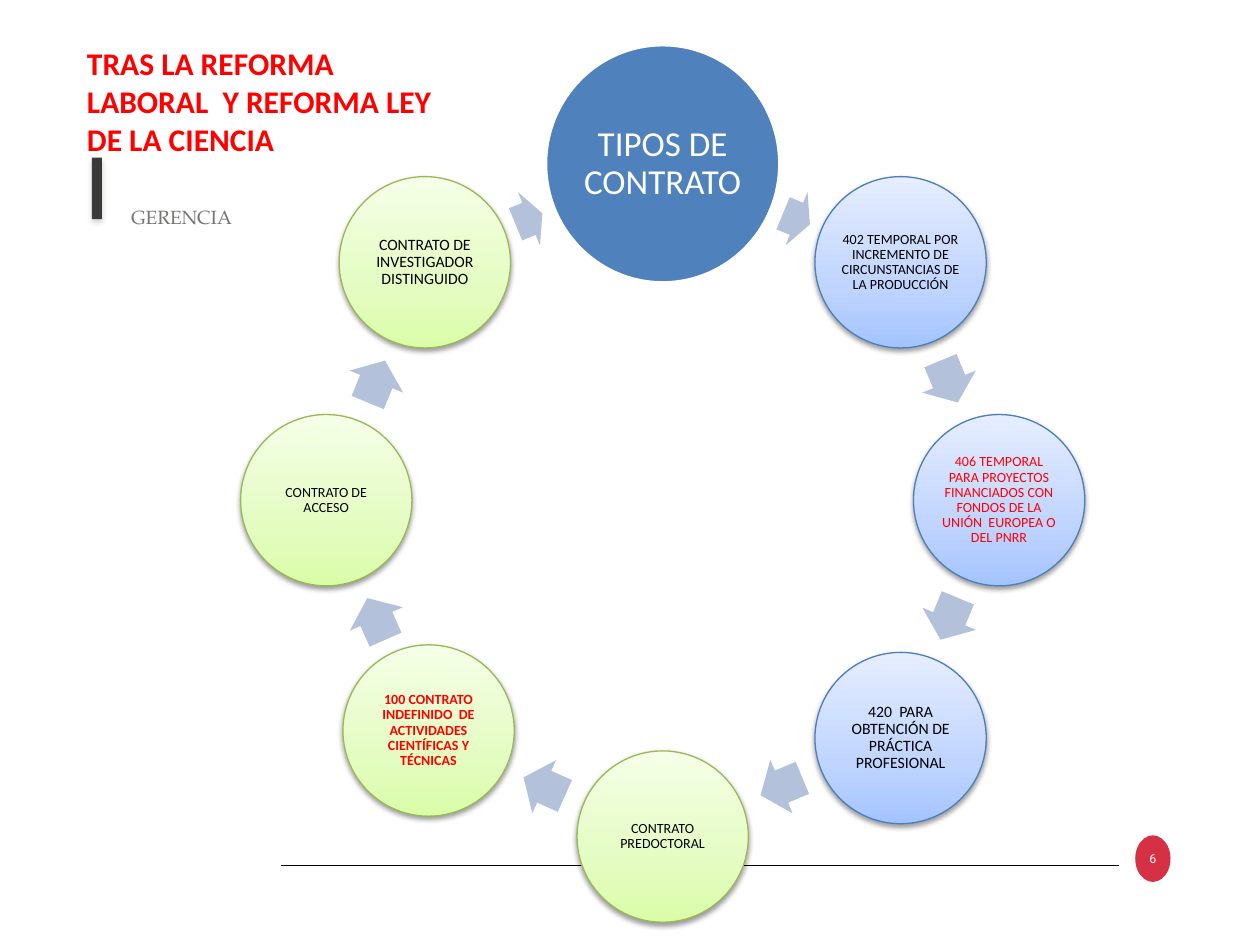
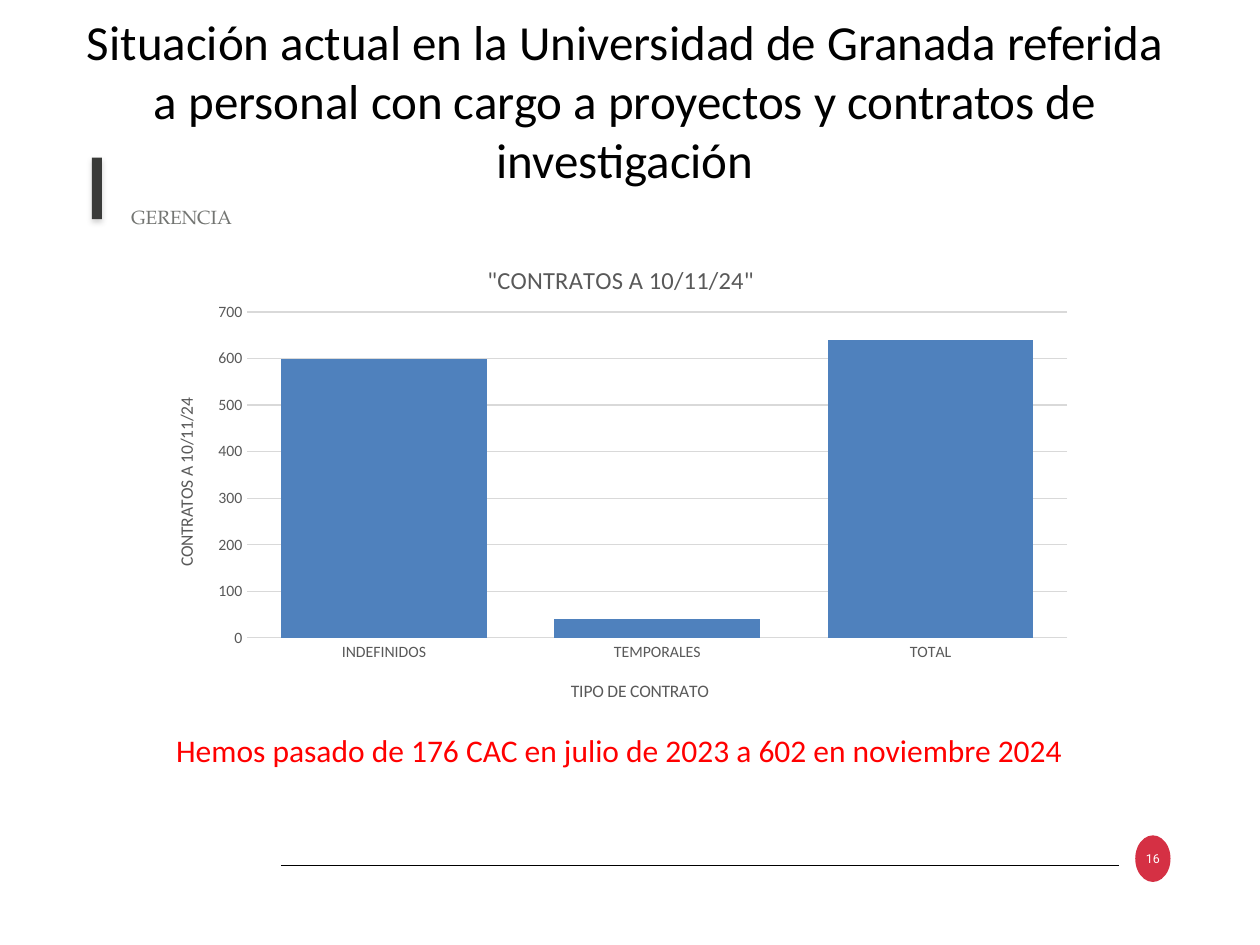
from dataclasses import dataclass
from math import cos, radians, sin

from lxml.etree import SubElement
from pptx import Presentation
from pptx.chart.data import CategoryChartData
from pptx.dml.color import RGBColor
from pptx.enum.chart import XL_CHART_TYPE, XL_TICK_MARK
from pptx.enum.shapes import MSO_CONNECTOR, MSO_SHAPE
from pptx.enum.text import MSO_ANCHOR, MSO_AUTO_SIZE, PP_ALIGN
from pptx.oxml.ns import qn
from pptx.util import Inches, Pt


@dataclass(frozen=True)
class Theme:
    body: str = "Calibri"
    brand: str = "TeX Gyre Pagella"
    number: str = "Roboto"
    black: str = "000000"
    white: str = "FFFFFF"
    red: str = "FF0000"
    blue: str = "4F81BD"
    arrow: str = "B3C1DB"
    badge: str = "D53044"
    bar: str = "3A3B39"
    brand_grey: str = "737572"
    chart_grey: str = "595959"
    grid: str = "D9D9D9"
    blue_ball: tuple = ("4B7EBC", ((0, "A4C4FF"), (35, "BFD4FF"), (100, "E6EEFF")))
    green_ball: tuple = ("98B955", ((0, "DAFDA7"), (35, "E4FCC2"), (100, "F5FFE7")))
    ball_shadow: tuple = ("000000", 38, 1.6)
    bar_shadow: tuple = ("808080", 35, 1.8)
    title: float = 28
    heading: float = 18
    hub: float = 20
    chart_title: float = 14
    axis_title: float = 10
    tick: float = 9
    brand_size: float = 10.9
    number_size: float = 7.1


T = Theme()
SLIDE_W, SLIDE_H = 10, 7.5

BRAND = "GERENCIA"
CYCLE = {
    "number": 6,
    "title": "TRAS LA REFORMA LABORAL  Y REFORMA LEY DE LA CIENCIA",
    "hub": "TIPOS DE CONTRATO",
    # text, ball style, size, colour, bold, shift from the ring; clockwise after the hub
    "contracts": [
        ("402 TEMPORAL POR INCREMENTO DE CIRCUNSTANCIAS DE LA PRODUCCIÓN",
         T.blue_ball, 8, T.black, False, (0, 0)),
        ("406 TEMPORAL PARA PROYECTOS FINANCIADOS CON FONDOS DE LA UNIÓN  EUROPEA O DEL PNRR",
         T.blue_ball, 8, T.red, False, (0, 0)),
        ("420  PARA OBTENCIÓN DE PRÁCTICA PROFESIONAL",
         T.blue_ball, 9, T.black, False, (0, 0)),
        ("CONTRATO PREDOCTORAL", T.green_ball, 8, T.black, False, (0, 0)),
        ("100 CONTRATO INDEFINIDO  DE ACTIVIDADES CIENTÍFICAS Y TÉCNICAS",
         T.green_ball, 8, T.red, True, (0.03, -0.06)),
        ("CONTRATO DE ACCESO", T.green_ball, 8, T.black, False, (0, 0)),
        ("CONTRATO DE INVESTIGADOR DISTINGUIDO",
         T.green_ball, 9, T.black, False, (0, 0)),
    ],
}
STATUS = {
    "number": 16,
    "title": "Situación actual en la Universidad de Granada referida a personal "
             "con cargo a proyectos y contratos de investigación",
    "chart_title": '"CONTRATOS A 10/11/24"',
    "category_title": "TIPO DE CONTRATO",
    "value_title": "CONTRATOS A 10/11/24",
    "contracts": {"INDEFINIDOS": 600, "TEMPORALES": 40, "TOTAL": 640},
    "note": "Hemos pasado de 176 CAC en julio de 2023 a 602 en noviembre 2024",
}

RING_X, RING_Y = 5.26, 3.97
RING_R, ARROW_R = 2.67, 2.46
BALL = 1.36
HUB_W, HUB_H = 1.86, 1.89
STEP = 360 / (len(CYCLE["contracts"]) + 1)


def rgb(value):
    return RGBColor.from_string(value)


def box(*lengths):
    return [Inches(v) for v in lengths]


def style(font, size, color, name=T.body, bold=False):
    font.name, font.size, font.bold = name, Pt(size), bold
    font.color.rgb = rgb(color)


def write(tf, text, size, color, name=T.body, bold=False, align=PP_ALIGN.LEFT,
          anchor=MSO_ANCHOR.TOP, insets=(0.1, 0.05, 0.1, 0.05), wrap=True, spacing=None):
    tf.word_wrap, tf.auto_size, tf.vertical_anchor = wrap, MSO_AUTO_SIZE.NONE, anchor
    tf.margin_left, tf.margin_top, tf.margin_right, tf.margin_bottom = box(*insets)
    p = tf.paragraphs[0]
    p.alignment = align
    if spacing:
        p.line_spacing = spacing
    r = p.add_run()
    r.text = text
    style(r.font, size, color, name, bold)


def add_text(s, at, text, size, color, **options):
    write(s.shapes.add_textbox(*box(*at)).text_frame, text, size, color, **options)


def add_color(parent, value, alpha=None):
    color = SubElement(parent, qn("a:srgbClr"), val=value)
    if alpha is not None:
        SubElement(color, qn("a:alpha"), val=str(alpha * 1000))


def add_shape(s, kind, at, fill=None, stops=None, line=None, width=0.75, shadow=None):
    """Add a preset shape with a solid fill, or a bottom-to-top gradient from stops."""
    sp = s.shapes.add_shape(kind, *box(*at))
    if stops:
        grad = SubElement(sp._element.spPr, qn("a:gradFill"), rotWithShape="1")
        gs_list = SubElement(grad, qn("a:gsLst"))
        for pos, color in stops:
            add_color(SubElement(gs_list, qn("a:gs"), pos=str(pos * 1000)), color)
        SubElement(grad, qn("a:lin"), ang=str(270 * 60000), scaled="0")
    else:
        sp.fill.solid()
        sp.fill.fore_color.rgb = rgb(fill)
    if line:
        sp.line.color.rgb, sp.line.width = rgb(line), Pt(width)
    else:
        sp.line.fill.background()
    sp.shadow.inherit = False
    if shadow:
        color, alpha, dist = shadow
        effects = sp._element.spPr.find(qn("a:effectLst"))
        outer = SubElement(effects, qn("a:outerShdw"), blurRad=str(Pt(3.1)),
                           dist=str(Pt(dist)), dir=str(90 * 60000), rotWithShape="0")
        add_color(outer, color, alpha)
    return sp


def add_slide(prs, content, title_at, **title_style):
    """Start a title-only slide with the shared footer, page badge and brand mark."""
    s = prs.slides.add_slide(prs.slide_layouts[5])
    title = s.shapes.title
    title.left, title.top, title.width, title.height = box(*title_at)
    write(title.text_frame, content["title"], **title_style)

    rule = s.shapes.add_connector(MSO_CONNECTOR.STRAIGHT, *box(2.23, 6.87, 8.88, 6.87))
    rule.line.color.rgb, rule.line.width = rgb(T.black), Pt(0.25)
    SubElement(rule._element.spPr, qn("a:effectLst"))
    badge = add_shape(s, MSO_SHAPE.OVAL, (9.01, 6.63, 0.28, 0.37), T.badge)
    write(badge.text_frame, str(content["number"]), T.number_size, T.white, name=T.number,
          align=PP_ALIGN.CENTER, anchor=MSO_ANCHOR.MIDDLE, insets=(0, 0, 0, 0), wrap=False)
    add_shape(s, MSO_SHAPE.RECTANGLE, (0.73, 1.25, 0.08, 0.49), T.bar, shadow=T.bar_shadow)
    add_text(s, (0.82, 1.61, 8.36, 0.22), BRAND, T.brand_size, T.brand_grey,
             name=T.brand, insets=(0.22, 0.02, 0.04, 0.02))
    return s


def on_ring(radius, angle, w, h, shift=(0, 0)):
    """Return the box of a w by h part centred on the ring, clockwise from the top."""
    x = RING_X + radius * sin(radians(angle)) + shift[0]
    y = RING_Y - radius * cos(radians(angle)) + shift[1]
    return x - w / 2, y - h / 2, w, h


def add_ball(s, at, text, size, color, bold=False, inset=0.01, **look):
    sp = add_shape(s, MSO_SHAPE.OVAL, at, **look)
    write(sp.text_frame, text, size, color, bold=bold, align=PP_ALIGN.CENTER,
          anchor=MSO_ANCHOR.MIDDLE, insets=[inset] * 4, spacing=0.9)


def build_cycle(prs):
    s = add_slide(prs, CYCLE, (0.59, 0.3, 3.07, 1.01),
                  size=T.heading, color=T.red, bold=True)
    add_ball(s, on_ring(RING_R, 0, HUB_W, HUB_H), CYCLE["hub"], T.hub, T.white,
             inset=0.03, fill=T.blue, line=T.white, width=2)
    for i, (text, (line, stops), size, color, bold, shift) in enumerate(CYCLE["contracts"], 1):
        add_ball(s, on_ring(RING_R, i * STEP, BALL, BALL, shift), text, size, color, bold,
                 stops=stops, line=line, shadow=T.ball_shadow)

    # The arrows beside the larger hub are shorter and stand further out.
    beside_hub = {0: (0.12, 0.04), 7: (-0.12, 0.04)}
    tilted = {4: 204.1, 5: 246.2}
    for i in range(len(CYCLE["contracts"]) + 1):
        angle = (i + 0.5) * STEP
        w = 0.23 if i in beside_hub else 0.36
        at = on_ring(ARROW_R, angle, w, 0.46, beside_hub.get(i, (0, 0)))
        arrow = add_shape(s, MSO_SHAPE.RIGHT_ARROW, at, T.arrow)
        arrow.adjustments[0], arrow.adjustments[1] = 0.6, 0.5
        arrow.rotation = tilted.get(i, angle)


def place(element, index, inner=False, **shares):
    """Pin a chart part at shares of the chart's width and height."""
    for old in element.findall(qn("c:layout")):
        element.remove(old)
    layout = SubElement(element, qn("c:layout"))
    element.insert(index, layout)
    manual = SubElement(layout, qn("c:manualLayout"))
    if inner:
        SubElement(manual, qn("c:layoutTarget"), val="inner")
    for mode in ("xMode", "yMode"):
        SubElement(manual, qn("c:" + mode), val="edge")
    for name, share in shares.items():
        SubElement(manual, qn("c:" + name), val=str(share))


def set_title(title, text, size, x, y):
    r = title.text_frame.paragraphs[0].add_run()
    r.text = text
    style(r.font, size, T.chart_grey)
    place(title._element, 1, x=x, y=y)


def add_contract_chart(s):
    data = CategoryChartData()
    data.categories = list(STATUS["contracts"])
    data.add_series("Series 1", list(STATUS["contracts"].values()))
    chart = s.shapes.add_chart(XL_CHART_TYPE.COLUMN_CLUSTERED,
                               *box(1.14, 1.86, 7.48, 3.86), data).chart
    style(chart.font, T.axis_title, T.black)
    chart.has_legend = False
    chart.has_title = True
    set_title(chart.chart_title, STATUS["chart_title"], T.chart_title, 0.36, 0.05)

    plot = chart.plots[0]
    plot.gap_width, plot.overlap, plot.vary_by_categories = 33, -30, False
    fill = plot.series[0].format.fill
    fill.solid()
    fill.fore_color.rgb = rgb(T.blue)

    cat, val = chart.category_axis, chart.value_axis
    for axis, text, x, y in ((cat, STATUS["category_title"], 0.45, 0.91),
                             (val, STATUS["value_title"], 0.03, 0.33)):
        axis.major_tick_mark = axis.minor_tick_mark = XL_TICK_MARK.NONE
        style(axis.tick_labels.font, T.tick, T.chart_grey)
        set_title(axis.axis_title, text, T.axis_title, x, y)
    val.minimum_scale, val.maximum_scale, val.major_unit = 0, 700, 100
    val.format.line.fill.background()
    for line in (cat.format.line, val.major_gridlines.format.line):
        line.color.rgb, line.width = rgb(T.grid), Pt(0.75)
    place(chart._chartSpace.chart.plotArea, 0, inner=True, x=0.11, y=0.16, w=0.87, h=0.67)


def build_status(prs):
    s = add_slide(prs, STATUS, (0.51, 0.04, 8.9, 1.61),
                  size=T.title, color=T.black, align=PP_ALIGN.CENTER)
    add_contract_chart(s)
    add_text(s, (1.3, 5.75, 7.66, 0.4), STATUS["note"], T.heading, T.red)


def main():
    prs = Presentation()
    prs.slide_width, prs.slide_height = box(SLIDE_W, SLIDE_H)
    build_cycle(prs)
    build_status(prs)
    prs.save("out.pptx")


if __name__ == "__main__":
    main()
